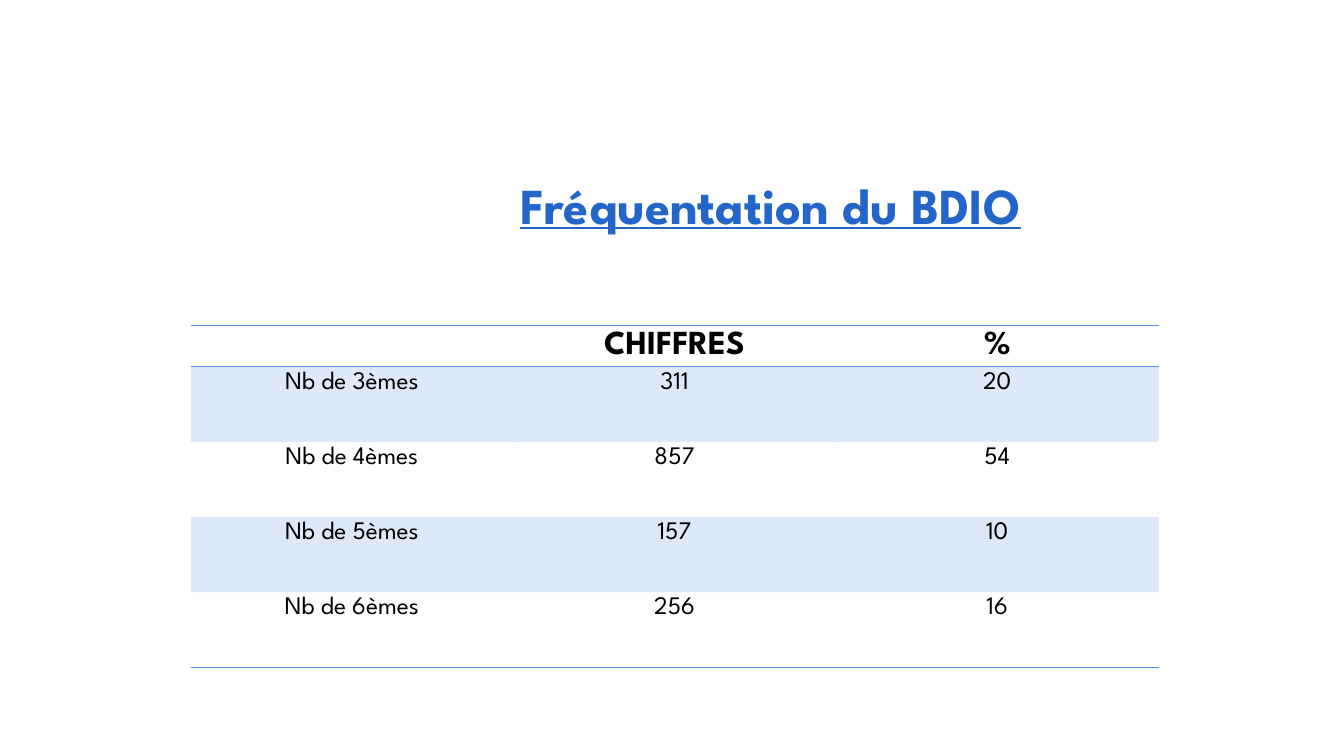
"""Build the slide on BDIO attendance: a title above a table of figures by school year."""
from dataclasses import dataclass

from lxml import etree
from pptx import Presentation
from pptx.dml.color import RGBColor
from pptx.enum import text
from pptx.oxml import ns
from pptx.util import Inches, Pt


@dataclass(frozen=True)
class Theme:
    font: str = "League Spartan"
    ink: str = "000000"
    title: str = "2365C9"
    accent: str = "588FE2"
    title_size: int = 36
    header_size: int = 24
    body_size: int = 18


theme = Theme()


def style_paragraph(paragraph, size, color, bold):
    paragraph.alignment = text.PP_ALIGN.CENTER
    font = paragraph.font
    font.name, font.size, font.bold = theme.font, Pt(size), bold
    font.color.rgb = RGBColor.from_string(color)


def add_border(properties, side, position):
    line = etree.Element(ns.qn(f"a:{side}"), w=str(Pt(1)))
    fill = etree.SubElement(line, ns.qn("a:solidFill"))
    etree.SubElement(fill, ns.qn("a:srgbClr"), val=theme.accent)
    properties.insert(position, line)


presentation = Presentation()
presentation.slide_width = Inches(13.33)
presentation.slide_height = Inches(7.5)
slide = presentation.slides.add_slide(presentation.slide_layouts[6])

rows = [
    ("", "CHIFFRES", "%"),
    ("Nb de 3èmes", "311", "20"),
    ("Nb de 4èmes", "857", "54"),
    ("Nb de 5èmes", "157", "10"),
    ("Nb de 6èmes", "256", "16"),
]
table = slide.shapes.add_table(
    len(rows), 3, Inches(1.89), Inches(3.23), Inches(9.6), Inches(3.39)
).table
table.first_row = table.horz_banding = False
no_style_no_grid = "{2D5ABB26-0587-4C30-8999-92F81FD0307C}"
table._tbl.tblPr.find(ns.qn("a:tableStyleId")).text = no_style_no_grid
for column in table.columns:
    column.width = Inches(3.2)

for row_index, values in enumerate(rows):
    header = row_index == 0
    table.rows[row_index].height = Inches(0.41 if header else 0.745)
    for column_index, value in enumerate(values):
        cell = table.cell(row_index, column_index)
        cell.text = value
        size = theme.header_size if header else theme.body_size
        style_paragraph(cell.text_frame.paragraphs[0], size, theme.ink, header)
        if row_index % 2:
            cell.fill.solid()
            cell.fill.fore_color.rgb = RGBColor.from_string(theme.accent)
            color = cell._tc.tcPr.find(f".//{ns.qn('a:srgbClr')}")
            etree.SubElement(color, ns.qn("a:alpha"), val="20000")
        else:
            cell.fill.background()
        sides = ("lnT", "lnB") if header else ("lnB",) if row_index == len(rows) - 1 else ()
        for position, side in enumerate(sides):
            add_border(cell._tc.tcPr, side, position)

title = slide.shapes.add_textbox(Inches(4.76), Inches(1.55), Inches(5.77), Inches(0.71))
title.text_frame.word_wrap = False
title.text_frame.margin_top = Inches(0.18)
paragraph = title.text_frame.paragraphs[0]
paragraph.text = "Fréquentation du BDIO"
style_paragraph(paragraph, theme.title_size, theme.title, True)
paragraph.font.underline = True

presentation.save("out.pptx")
